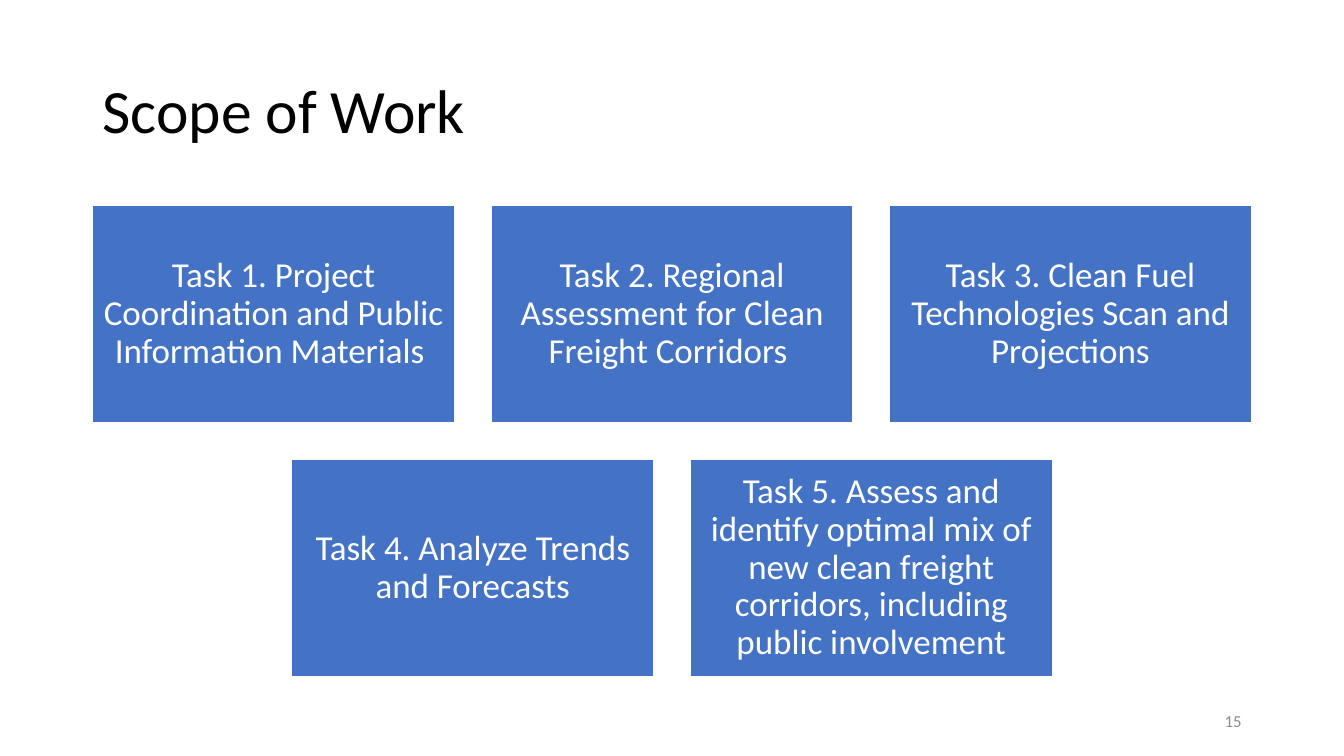
from dataclasses import dataclass

from pptx import Presentation
from pptx.dml.color import RGBColor
from pptx.enum import shapes, text
from pptx.util import Cm, Pt


@dataclass(frozen=True)
class Theme:
    font: str = "Calibri"
    ink: RGBColor = RGBColor(0x00, 0x00, 0x00)
    white: RGBColor = RGBColor(0xFF, 0xFF, 0xFF)
    blue: RGBColor = RGBColor(0x44, 0x72, 0xC4)
    grey: RGBColor = RGBColor(0x8C, 0x8C, 0x8C)
    title_size: Pt = Pt(44)
    task_size: Pt = Pt(25)
    number_size: Pt = Pt(12)


THEME = Theme()
TASK_ROWS = [
    [
        "Task 1. Project Coordination and Public Information Materials ",
        "Task 2. Regional Assessment for Clean Freight Corridors ",
        "Task 3. Clean Fuel Technologies Scan and Projections",
    ],
    [
        "Task 4. Analyze Trends and Forecasts",
        "Task 5. Assess and identify optimal mix of new clean freight "
        "corridors, including public involvement",
    ],
]


def write(shape, words, size, color, align, line_spacing=1.0):
    frame = shape.text_frame
    frame.text = words
    frame.word_wrap = True
    frame.auto_size = text.MSO_AUTO_SIZE.NONE
    frame.vertical_anchor = text.MSO_ANCHOR.MIDDLE
    para = frame.paragraphs[0]
    para.alignment = align
    para.line_spacing = line_spacing
    para.font.name = THEME.font
    para.font.size = size
    para.font.color.rgb = color


def add_title(page, left, top, width, height):
    title = page.shapes.title
    title.left, title.top, title.width, title.height = left, top, width, height
    write(title, "Scope of Work", THEME.title_size, THEME.ink,
          text.PP_ALIGN.LEFT, 0.9)


def add_task(page, words, left, top, width, height):
    box = page.shapes.add_shape(shapes.MSO_SHAPE.RECTANGLE,
                                left, top, width, height)
    box.shadow.inherit = False
    box.fill.solid()
    box.fill.fore_color.rgb = THEME.blue
    box.line.color.rgb = THEME.white
    box.line.width = Pt(1)
    frame = box.text_frame
    frame.margin_left = frame.margin_right = Cm(0.25)
    frame.margin_top = frame.margin_bottom = Cm(0.25)
    write(box, words, THEME.task_size, THEME.white, text.PP_ALIGN.CENTER, 0.9)


def add_task_grid(page, left, top, width):
    """Centre each row of tasks; gaps are a tenth of a box width."""
    columns = max(len(row) for row in TASK_ROWS)
    box_width = int(width / (columns + 0.1 * (columns - 1)))
    box_height = int(0.6 * box_width)
    gap = int(0.1 * box_width)
    for row_index, row in enumerate(TASK_ROWS):
        row_width = len(row) * (box_width + gap) - gap
        row_left = left + (width - row_width) // 2
        row_top = top + row_index * (box_height + gap)
        for column, words in enumerate(row):
            add_task(page, words, row_left + column * (box_width + gap),
                     row_top, box_width, box_height)


def add_page_number(page, left, top, width, height):
    box = page.shapes.add_textbox(left, top, width, height)
    write(box, "15", THEME.number_size, THEME.grey, text.PP_ALIGN.RIGHT)


def main():
    deck = Presentation()
    deck.slide_width, deck.slide_height = Cm(33.87), Cm(19.05)
    page = deck.slides.add_slide(deck.slide_layouts.get_by_name("Title Only"))
    left, width = Cm(2.33), Cm(29.21)
    add_title(page, left, Cm(1.01), width, Cm(3.68))
    add_task_grid(page, left, Cm(5.18), width)
    number_width = Cm(7.62)
    add_page_number(page, left + width - number_width, Cm(17.66),
                    number_width, Cm(1.01))
    deck.save("out.pptx")


if __name__ == "__main__":
    main()
